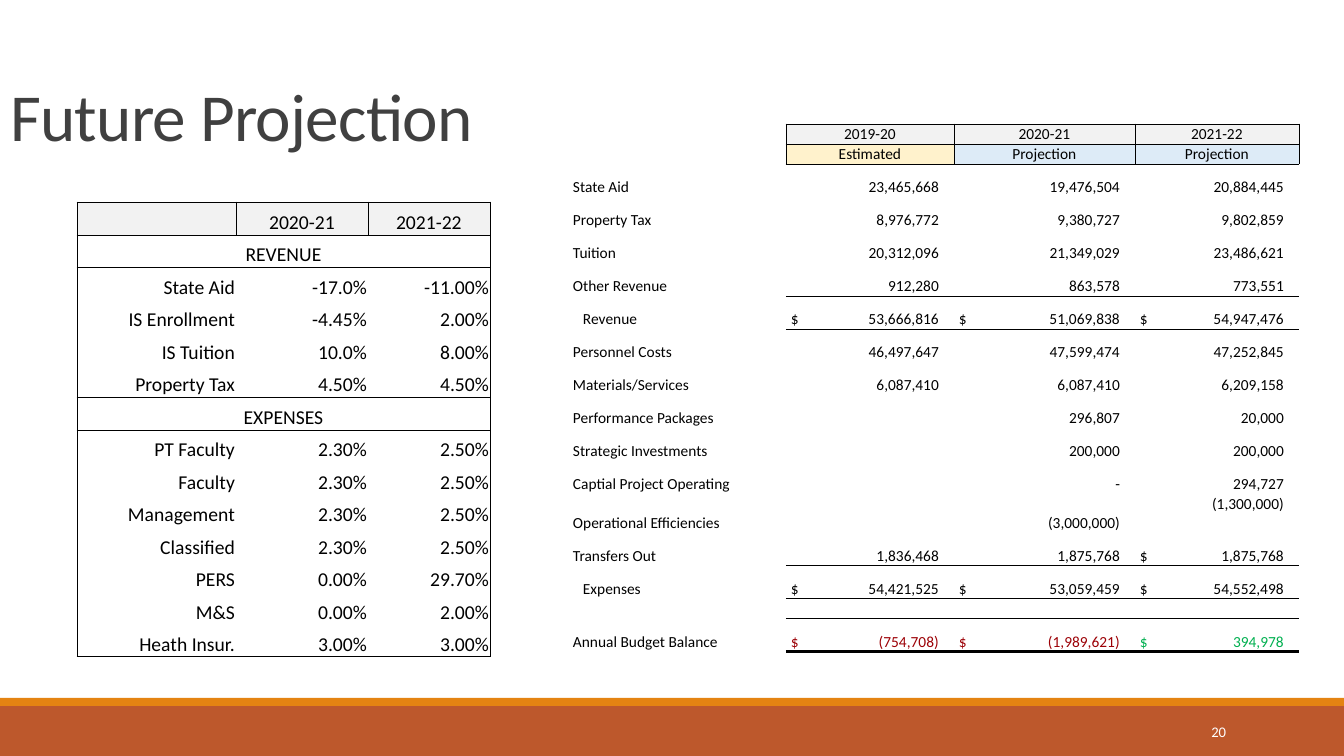
from dataclasses import dataclass
from typing import Any

from lxml.etree import SubElement
from pptx import Presentation
from pptx.dml.color import RGBColor
from pptx.enum.shapes import MSO_SHAPE
from pptx.enum.text import MSO_ANCHOR, MSO_AUTO_SIZE, PP_ALIGN
from pptx.oxml.ns import qn
from pptx.util import Emu, Pt

PX_PER_INCH = 100.8
NO_STYLE = "{2D5ABB26-0587-4C30-8999-92F81FD0307C}"
GREY, CREAM, BLUE = "F2F2F2", "FFF2CC", "DDEBF7"
RED, GREEN, BLACK = "9C0006", "00B050", "000000"


@dataclass
class Cell:
    text: str = ""
    align: Any = PP_ALIGN.LEFT
    fill: str = ""
    color: str = BLACK
    edges: str = ""
    edge_width: float = 0.5
    left: int = 1
    right: int = 1
    tab: int = 0
    anchor: Any = MSO_ANCHOR.BOTTOM
    span: int = 1


@dataclass
class Line:
    label: str
    values: tuple[str, ...] = ("", "", "")
    height: int = 33
    rule: float = 0
    indent: int = 1
    colors: tuple[str, ...] = (BLACK, BLACK, BLACK)


@dataclass
class Bar:
    top: int
    height: int
    color: str


def px(length: int) -> Emu:
    return Emu(round(length * 914400 / PX_PER_INCH))


def rgb(color: str) -> RGBColor:
    return RGBColor.from_string(color)


def apply(target: Any, values: dict[str, Any]) -> None:
    for name, value in values.items():
        setattr(target, name, value)


def write(para: Any, text: str, size: float, color: str, align: Any) -> Any:
    para.alignment = align
    span = para.add_run()
    span.text = text
    apply(span.font, {"size": Pt(size), "name": "Calibri"})
    span.font.color.rgb = rgb(color)
    return span


def add_edges(target: Any, edges: str, width: float) -> None:
    properties = target._tc.get_or_add_tcPr()
    for side in "LRTB":
        if side in edges:
            line = SubElement(properties, qn(f"a:ln{side}"), w=str(Pt(width)))
            fill = SubElement(line, qn("a:solidFill"))
            SubElement(fill, qn("a:srgbClr"), val=BLACK)


def fill_cell(target: Any, cell: Cell, size: float) -> None:
    apply(target, {
        "margin_left": px(cell.left), "margin_right": px(cell.right),
        "margin_top": px(1), "margin_bottom": 0, "vertical_anchor": cell.anchor,
    })
    add_edges(target, cell.edges, cell.edge_width)
    if cell.fill:
        target.fill.solid()
        target.fill.fore_color.rgb = rgb(cell.fill)
    else:
        target.fill.background()
    para = target.text_frame.paragraphs[0]
    if not cell.text:
        SubElement(para._p, qn("a:endParaRPr"), sz=str(round(size * 100)))
        return
    write(para, cell.text, size, cell.color, cell.align)
    if cell.tab:
        stops = SubElement(para._p.get_or_add_pPr(), qn("a:tabLst"))
        SubElement(stops, qn("a:tab"), pos=str(px(cell.tab)), algn="r")


def draw_table(page: Any, left: int, top: int, widths: list[int], heights: list[int],
               rows: list[list[Cell]], size: float) -> None:
    frame = page.shapes.add_table(len(rows), len(widths), px(left), px(top),
                                  px(sum(widths)), px(sum(heights)))
    table = frame.table
    apply(table, {"first_row": False, "horz_banding": False})
    table._tbl.tblPr.find(qn("a:tableStyleId")).text = NO_STYLE
    for column, width in zip(table.columns, widths):
        column.width = px(width)
    for row, height in zip(table.rows, heights):
        row.height = px(height)
    for r, cells in enumerate(rows):
        for c, cell in enumerate(cells):
            target = table.cell(r, c)
            if cell.span > 1:
                target.merge(table.cell(r, c + cell.span - 1))
            fill_cell(target, cell, size)


def header(text: str, fill: str = GREY) -> Cell:
    return Cell(text, PP_ALIGN.CENTER, fill, edges="LRTB")


def amount(text: str, width: int, color: str, rule: float) -> Cell:
    cell = Cell(text, PP_ALIGN.RIGHT, color=color, right=15,
                edges="B" if rule else "", edge_width=rule)
    if text.startswith("$"):
        apply(cell, {"align": PP_ALIGN.LEFT, "left": 5, "right": 1, "tab": width - 20})
    return cell


def draw_budget(page: Any) -> None:
    widths = [214, 168, 181, 164]
    lines = [
        Line("State Aid", ("23,465,668", "19,476,504", "20,884,445")),
        Line("Property Tax", ("8,976,772", "9,380,727", "9,802,859")),
        Line("Tuition", ("20,312,096", "21,349,029", "23,486,621")),
        Line("Other Revenue", ("912,280", "863,578", "773,551"), rule=0.5),
        Line("Revenue", ("$\t53,666,816", "$\t51,069,838", "$\t54,947,476"), rule=0.5, indent=11),
        Line("Personnel Costs", ("46,497,647", "47,599,474", "47,252,845")),
        Line("Materials/Services", ("6,087,410", "6,087,410", "6,209,158")),
        Line("Performance Packages", ("", "296,807", "20,000")),
        Line("Strategic Investments", ("", "200,000", "200,000")),
        Line("Captial Project Operating", ("", "-", "294,727")),
        Line("Operational Efficiencies", ("", "(3,000,000)", "(1,300,000)"), height=39),
        Line("Transfers Out", ("1,836,468", "1,875,768", "$\t1,875,768"), rule=0.5),
        Line("Expenses", ("$\t54,421,525", "$\t53,059,459", "$\t54,552,498"), rule=0.5, indent=11),
        Line("", height=20, rule=0.5),
        Line("Annual Budget Balance", ("$\t(754,708)", "$\t(1,989,621)", "$\t394,978"),
             rule=2, colors=(RED, RED, GREEN)),
    ]
    rows = [
        [Cell(), header("2019-20"), header("2020-21"), header("2021-22")],
        [Cell(), header("Estimated", CREAM), header("Projection", BLUE), header("Projection", BLUE)],
    ]
    for line in lines:
        amounts = [amount(text, width, color, line.rule)
                   for text, width, color in zip(line.values, widths[1:], line.colors)]
        if line.label == "Operational Efficiencies":
            amounts[-1].anchor = MSO_ANCHOR.TOP
        rows.append([Cell(line.label, left=line.indent), *amounts])
    draw_table(page, 572, 124, widths, [20, 20] + [line.height for line in lines], rows, 11)


def draw_assumptions(page: Any) -> None:
    sections = {
        "REVENUE": [
            ("State Aid", "-17.0%", "-11.00%"), ("IS Enrollment", "-4.45%", "2.00%"),
            ("IS Tuition", "10.0%", "8.00%"), ("Property Tax", "4.50%", "4.50%"),
        ],
        "EXPENSES": [
            ("PT Faculty", "2.30%", "2.50%"), ("Faculty", "2.30%", "2.50%"),
            ("Management", "2.30%", "2.50%"), ("Classified", "2.30%", "2.50%"),
            ("PERS", "0.00%", "29.70%"), ("M&S", "0.00%", "2.00%"),
            ("Heath Insur.", "3.00%", "3.00%"),
        ],
    }
    rows = [[header(""), header("2020-21"), header("2021-22")]]
    for name, rates in sections.items():
        rows.append([Cell(name, PP_ALIGN.CENTER, edges="LRTB", span=3)])
        for rate in rates:
            bottom = "B" if rate is rates[-1] else ""
            rows.append([Cell(text, PP_ALIGN.RIGHT, edges=side + bottom)
                         for text, side in zip(rate, ("L", "", "R"))])
    draw_table(page, 77, 202, [159, 132, 122], [33, 32] * 7, rows, 14)


def main() -> None:
    deck = Presentation()
    apply(deck, {"slide_width": px(1344), "slide_height": px(756)})
    page = deck.slides.add_slide(deck.slide_layouts[5])

    for bar in (Bar(706, 50, "BD582C"), Bar(698, 8, "E48312")):
        shape = page.shapes.add_shape(MSO_SHAPE.RECTANGLE, 0, px(bar.top), px(1344), px(bar.height))
        shape.shadow.inherit = False
        shape.fill.solid()
        shape.fill.fore_color.rgb = rgb(bar.color)
        shape.line.fill.background()

    title = page.shapes.title
    apply(title, {"left": 0, "top": 0, "width": px(1109), "height": px(160)})
    apply(title.text_frame, {"vertical_anchor": MSO_ANCHOR.BOTTOM, "word_wrap": True,
                             "auto_size": MSO_AUTO_SIZE.NONE})
    para = title.text_frame.paragraphs[0]
    para.line_spacing = 0.85
    span = write(para, "Future Projection", 48, "404040", PP_ALIGN.LEFT)
    span.font._element.set("spc", "-50")

    box = page.shapes.add_textbox(px(1092), px(712), px(144), px(40))
    apply(box.text_frame, {"word_wrap": True, "vertical_anchor": MSO_ANCHOR.MIDDLE})
    write(box.text_frame.paragraphs[0], "20", 10.5, "FFFFFF", PP_ALIGN.RIGHT)

    draw_budget(page)
    draw_assumptions(page)
    deck.save("out.pptx")


if __name__ == "__main__":
    main()
